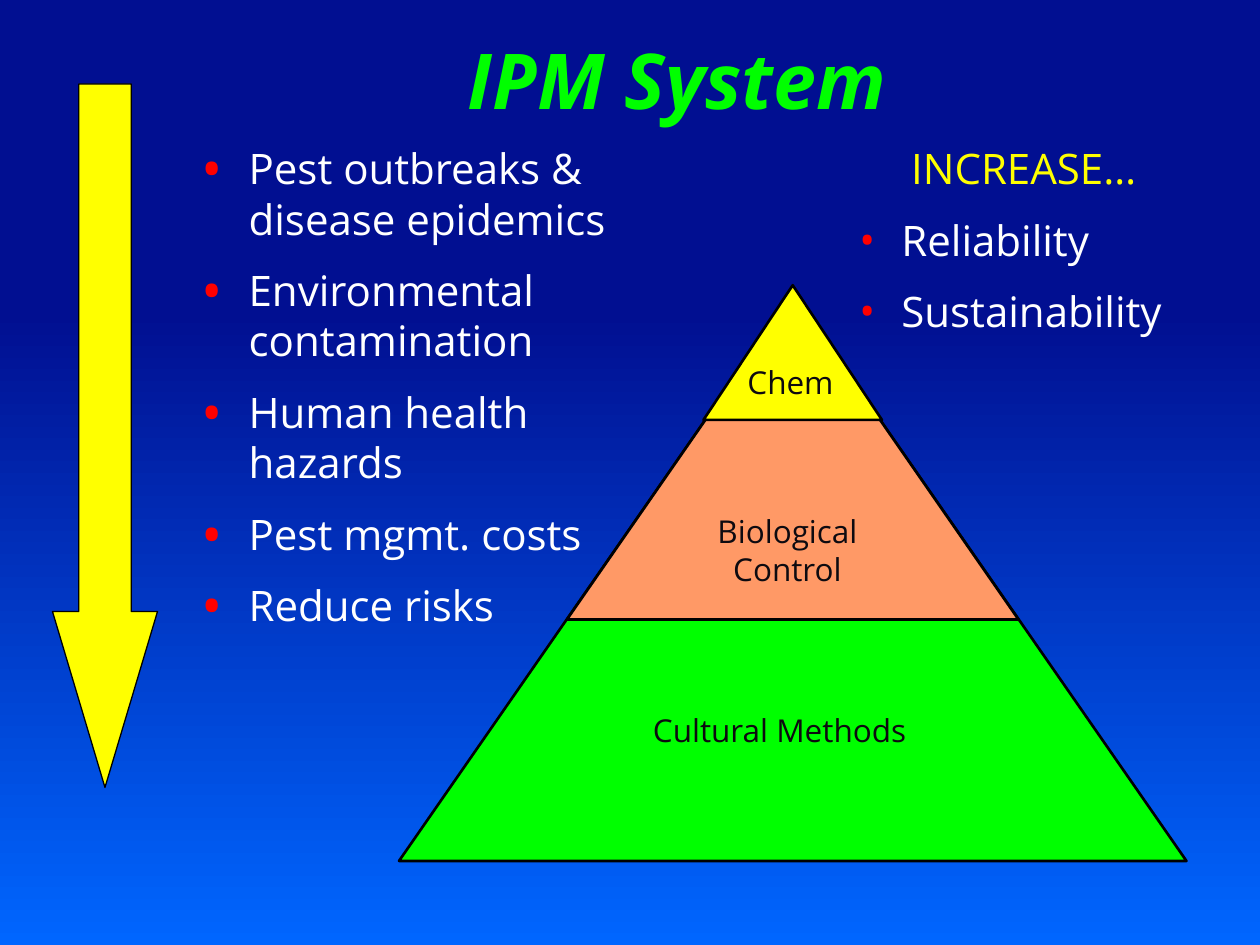
from pptx import Presentation
from pptx.util import Pt
from pptx.dml.color import RGBColor
from pptx.enum.shapes import MSO_SHAPE as SHAPE
from pptx.enum.text import PP_ALIGN as ALIGN, MSO_ANCHOR as ANCHOR
from lxml.etree import SubElement
from pptx.oxml.ns import qn

THEME = {
    "font": "Open Sans", "title": 44, "body": 24, "label": 18,
    "green": "00FF00", "yellow": "FFFF00", "orange": "FF9966", "red": "FF0000",
    "white": "FFFFFF", "ink": "0D0A10", "black": "000000",
    "sky": [("010F91", 0.33), ("0066FF", 1)],
}
TITLE = "IPM System"
DECREASE = ["Pest outbreaks & disease epidemics", "Environmental contamination",
            "Human health hazards", "Pest mgmt. costs", "Reduce risks"]
INCREASE_HEAD = "INCREASE…"
INCREASE = ["Reliability", "Sustainability"]
APEX = 453
TIERS = [("green", 168, 450, 324), ("orange", 168, 258, 186), ("yellow", 163, 102, 77)]
LABELS = [("Cultural Methods", (366, 403, 168, 29), ALIGN.LEFT),
          ("Biological Control", (372, 289, 156, 51), ALIGN.CENTER),
          ("Chem", (420, 204, 84, 29), ALIGN.LEFT)]


def rgb(name):
    return RGBColor.from_string(THEME[name])


def add_shape(s, kind, box, fill, weight):
    sp = s.shapes.add_shape(kind, *map(Pt, box))
    sp.shadow.inherit = False
    sp.fill.solid()
    sp.fill.fore_color.rgb = rgb(fill)
    sp.line.color.rgb = rgb("black")
    sp.line.width = Pt(weight)
    return sp


def add_text(s, box, lines, size, color, align=ALIGN.LEFT):
    sp = s.shapes.add_textbox(*map(Pt, box))
    tf = sp.text_frame
    tf.word_wrap = True
    tf.text = "\n".join(lines)
    for i, p in enumerate(tf.paragraphs):
        p.alignment = align
        if i:
            p.space_before = Pt(THEME[size] / 2)
        for r in p.runs:
            r.font.name = THEME["font"]
            r.font.size = Pt(THEME[size])
            r.font.color.rgb = rgb(color)
    return tf


def add_bullet(p, margin, hang, percent):
    pPr = p._p.get_or_add_pPr()
    pPr.set("marL", str(Pt(margin)))
    pPr.set("indent", str(-Pt(hang)))
    clr = SubElement(pPr, qn("a:buClr"))
    SubElement(clr, qn("a:srgbClr"), val=THEME["red"])
    SubElement(pPr, qn("a:buSzPct"), val=str(percent * 1000))
    SubElement(pPr, qn("a:buFont"), typeface=THEME["font"])
    SubElement(pPr, qn("a:buChar"), char="•")


def main():
    prs = Presentation()
    prs.slide_width, prs.slide_height = Pt(720), Pt(540)
    s = prs.slides.add_slide(prs.slide_layouts[6])

    sky = s.background.fill
    sky.gradient()
    sky.gradient_angle = 270
    for stop, (color, position) in zip(sky.gradient_stops, THEME["sky"]):
        stop.color.rgb = RGBColor.from_string(color)
        stop.position = position

    arrow = add_shape(s, SHAPE.DOWN_ARROW, (30, 48, 60, 402), "yellow", 0.75)
    arrow.adjustments[0], arrow.adjustments[1] = 0.5, 1.675

    tf = add_text(s, (114, 0, 546, 90), [TITLE], "title", "green", ALIGN.CENTER)
    tf.vertical_anchor = ANCHOR.MIDDLE
    tf.paragraphs[0].runs[0].font.bold = True
    tf.paragraphs[0].runs[0].font.italic = True

    tf = add_text(s, (108, 78, 264, 298), DECREASE, "body", "white")
    for p in tf.paragraphs:
        add_bullet(p, 27, 27, 135)

    tf = add_text(s, (468, 78, 234, 124), [INCREASE_HEAD] + INCREASE, "body", "white")
    head, *items = tf.paragraphs
    head.alignment = ALIGN.CENTER
    head.runs[0].font.color.rgb = rgb("yellow")
    for p in items:
        add_bullet(p, 40, 24, 100)

    for color, top, width, height in TIERS:
        add_shape(s, SHAPE.ISOSCELES_TRIANGLE, (APEX - width / 2, top, width, height), color, 1.5)
    for text, box, align in LABELS:
        add_text(s, box, [text], "label", "ink", align)

    prs.save("out.pptx")


if __name__ == "__main__":
    main()
